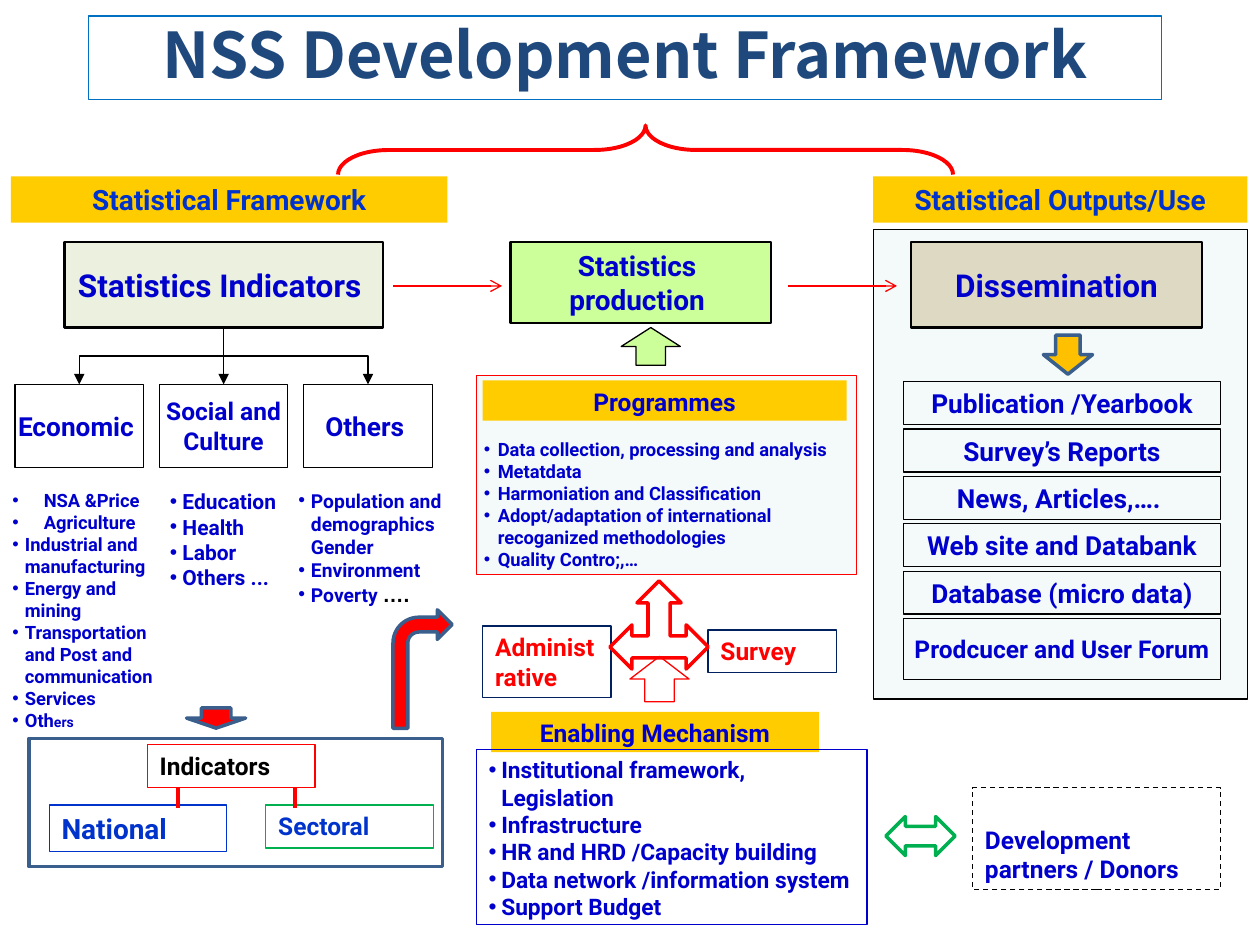
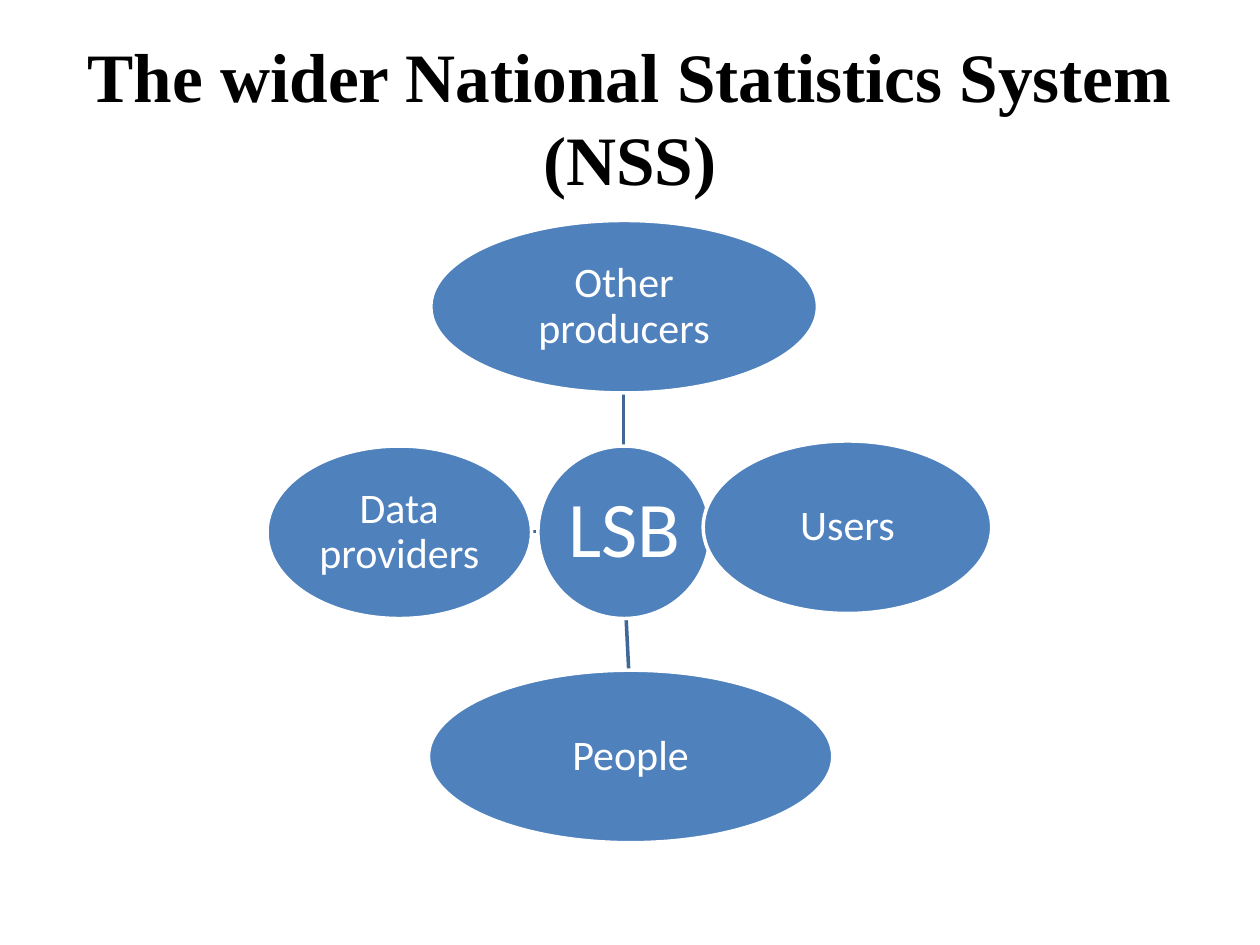
"""Build two slides on the national statistics system (NSS)."""
from lxml import etree
from pptx import Presentation
from pptx.dml.color import RGBColor
from pptx.enum.dml import MSO_LINE
from pptx.enum.shapes import MSO_CONNECTOR as CONN, MSO_SHAPE as SHAPE
from pptx.enum.text import MSO_ANCHOR as ANCHOR, PP_ALIGN as ALIGN
from pptx.oxml.ns import qn
from pptx.util import Pt

rgb = RGBColor.from_string
BLUE, ROYAL, RED, GREEN = "0000CC", "0033CC", "FF0000", "00B050"
BLACK, WHITE, STEEL, GOLD = "000000", "FFFFFF", "3A5F8C", "FFCC00"
LIME, NAVY, PALE = "CCFF99", "002060", "BBE0E3"
RECT = SHAPE.RECTANGLE
TIGHT, NORMAL = (1.44, 0), (7.2, 3.6)


def box(s, kind, x, y, w, h, text="", size=14, color=BLUE, fill=None, line=None, lw=0.75,
        align=ALIGN.LEFT, anchor=ANCHOR.TOP, inset=NORMAL, font="Roboto", bold=True,
        spacing=None, indent=None):
    """Add a shape, or a text box when kind is None."""
    at = Pt(x), Pt(y), Pt(w), Pt(h)
    if kind is None:
        sp = s.shapes.add_textbox(*at)
    else:
        sp = s.shapes.add_shape(kind, *at)
        sp.shadow.inherit = False
    if fill:
        sp.fill.solid()
        sp.fill.fore_color.rgb = rgb(fill)
    else:
        sp.fill.background()
    if line:
        sp.line.color.rgb = rgb(line)
        sp.line.width = Pt(lw)
    else:
        sp.line.fill.background()
    if not text:
        return sp
    tf = sp.text_frame
    tf.text = text
    tf.word_wrap = True
    tf.vertical_anchor = anchor
    tf.margin_left = tf.margin_right = Pt(inset[0])
    tf.margin_top = tf.margin_bottom = Pt(inset[1])
    for p in tf.paragraphs:
        p.alignment = align
        p.line_spacing = spacing
        for r in p.runs:
            r.font.size, r.font.name, r.font.bold = Pt(size), font, bold
            r.font.color.rgb = rgb(color)
        if indent:
            pPr = p._p.get_or_add_pPr()
            pPr.set("marL", str(Pt(indent[0])))
            pPr.set("indent", str(Pt(-indent[1])))
            etree.SubElement(pPr, qn("a:buFont")).set("typeface", "Arial")
            etree.SubElement(pPr, qn("a:buChar")).set("char", "•")
    return sp


def link(s, x1, y1, x2, y2, color, width=0.75, head=None, kind=CONN.STRAIGHT):
    """Add a connector, with an arrowhead at its end when head is given."""
    c = s.shapes.add_connector(kind, Pt(x1), Pt(y1), Pt(x2), Pt(y2))
    c.line.color.rgb = rgb(color)
    c.line.width = Pt(width)
    if head:
        etree.SubElement(c.line._get_or_add_ln(), qn("a:tailEnd")).set("type", head)
    etree.SubElement(c._element.spPr, qn("a:effectLst"))
    return c


prs = Presentation()
prs.slide_width, prs.slide_height = Pt(720), Pt(540)
blank = prs.slide_layouts[6]
centred = dict(align=ALIGN.CENTER, anchor=ANCHOR.MIDDLE)
cell = dict(centred, inset=TIGHT)

s = prs.slides.add_slide(blank)
box(s, RECT, 50.4, 9.2, 613.4, 47.6, "NSS Development Framework", 36, "1F497D",
    line="0070C0", font="Noto Sans CJK TC", spacing=0.9, **centred)
brace = box(s, SHAPE.LEFT_BRACE, 354.8, -90, 28.1, 351.4, line=RED, lw=2.25)
brace.rotation = 90
brace.adjustments[0] = 1.03

for x, y, w, h, edge in [(272.2, 214.6, 217.4, 113.8, RED), (499, 131, 213.8, 268.4, BLACK)]:
    panel = box(s, RECT, x, y, w, h, fill=PALE, line=edge)
    tint = panel._element.spPr.find(qn("a:solidFill"))[0]
    etree.SubElement(tint, qn("a:alpha")).set("val", "15000")

for text, x, y, w, h, size, color in [
        ("Statistical Framework", 6.3, 100.8, 249.4, 26.5, 16, ROYAL),
        ("Statistical Outputs/Use", 499, 100.8, 213.8, 26.5, 16, ROYAL),
        ("Programmes", 275.8, 217.4, 208, 23, 14, BLUE),
        ("Enabling Mechanism", 280.6, 406.8, 187.4, 23, 14, BLUE)]:
    box(s, RECT, x, y, w, h, text, size, color, GOLD, align=ALIGN.CENTER)

stages = [box(s, RECT, x, 138.2, w, h, text, size, fill=fill, line=BLACK, lw=1.5, **cell)
          for text, x, w, h, size, fill in [
              ("Statistics Indicators ", 36.7, 182.2, 49, 18, "EBF1DE"),
              ("Statistics \nproduction ", 291.6, 149, 46.4, 16, LIME),
              ("Dissemination", 520.6, 166.3, 49, 18, "DDD9C3")]]
for x in (224.6, 450.3):
    link(s, x, 163.4, x + 62.3, 163.4, RED, head="arrow")

step = 82.5
categories = [box(s, RECT, 8.6 + step * i, 219.6, 73.4, 47.5, text, size, line=BLACK, **cell)
              for i, (text, size) in enumerate(
                  [("Economic ", 15), ("Social and Culture", 14), ("Others ", 15)])]
stem = link(s, 127.8, 187.2, 127.8, 219.6, BLACK, head="triangle")
stem.begin_connect(stages[0], 2)
stem.end_connect(categories[1], 0)
for x, turn, flip in [(86.55, 90, "0"), (169.05, 270, "1")]:
    branch = link(s, x - 16.2, 203.4 - step / 2, x + 16.2, 203.4 + step / 2, BLACK,
                  head="triangle", kind=CONN.ELBOW)
    xfrm = branch._element.spPr.find(qn("a:xfrm"))
    xfrm.set("rot", str(turn * 60000))
    xfrm.set("flipH", flip)

topics = [box(s, None, x, 275.8, w, h, text, size, indent=(7.2, 7.2))
          for x, w, h, size, text in [
              (0, 97.9, 157, 10.5,
               "NSA &Price\nAgriculture\nIndustrial and manufacturing\nEnergy and mining\n"
               "Transportation and Post and communication\nServices\nOth"),
              (90, 96.5, 65.5, 12, "Education\nHealth\nLabor\nOthers ..."),
              (163.4, 106.6, 74.9, 11,
               "Population and demographics Gender\nEnvironment\nPoverty ")]]
for p in topics[0].text_frame.paragraphs[:2]:
    p._p.pPr.set("marL", str(Pt(18)))
    p._p.pPr.set("indent", str(Pt(-18)))
for topic, text, size, font, color in [(topics[0], "ers", 8, "Roboto", BLUE),
                                       (topics[2], "….", 12, "Arial", BLACK)]:
    r = topic.text_frame.paragraphs[-1].add_run()
    r.text = text
    r.font.size, r.font.name, r.font.bold = Pt(size), font, True
    r.font.color.rgb = rgb(color)

box(s, None, 268.6, 247, 214.6, 82,
    "Data collection, processing and analysis\nMetatdata\nHarmoniation and Classification\n"
    "Adopt/adaptation of international recoganized methodologies\nQuality Contro;,…",
    10.5, anchor=ANCHOR.MIDDLE, inset=TIGHT, indent=(14.4, 7.92))
box(s, RECT, 272.2, 428.4, 223.2, 100.1,
    "Institutional framework, Legislation\nInfrastructure\nHR and HRD /Capacity building\n"
    "Data network /information system\nSupport Budget", 13, line=BLUE, indent=(7.2, 7.2))
donors = box(s, RECT, 555.8, 450, 141.8, 58.3, "Development partners / Donors", line=BLACK,
             anchor=ANCHOR.BOTTOM)
donors.line.dash_style = MSO_LINE.DASH

outputs = ["Publication /Yearbook", "Survey’s Reports", "News, Articles,…. ",
           "Web site and Databank", "Database (micro data)", "Prodcucer and User Forum"]
for i, text in enumerate(outputs):
    h, size = (34.6, 14) if i == len(outputs) - 1 else (24.5, 15)
    box(s, RECT, 516.2, 218.2 + 27.06 * i, 181.4, h, text, size, line=BLACK, **cell)

box(s, RECT, 16.6, 421.9, 236.2, 73.4, line=STEEL, lw=2)
for text, x, y, w, h, size, color, edge in [
        ("Indicators", 84.2, 425.5, 95.8, 24.5, 14, BLACK, RED),
        ("National", 28.1, 460.1, 101.5, 26.6, 16, ROYAL, ROYAL),
        ("Sectoral", 151.9, 460.1, 95.8, 24.5, 14, ROYAL, GREEN),
        ("Administrative", 275.8, 357.8, 73.4, 41, 14, RED, NAVY),
        ("Survey", 404.6, 360, 73.4, 24.5, 14, RED, NAVY)]:
    box(s, RECT, x, y, w, h, text, size, color, line=edge)
for x in (101.5, 168.5):
    link(s, x, 450, x, 461.5, RED, 2.25)

for kind, x, y, w, h, fill, edge, lw in [
        (SHAPE.UP_ARROW, 360, 375.1, 33.8, 25.9, None, RED, 0.75),
        (SHAPE.UP_ARROW, 355, 187.2, 33.8, 21.6, LIME, BLACK, 0.75),
        (SHAPE.DOWN_ARROW, 106.6, 404.6, 33.8, 11.5, RED, STEEL, 2),
        (SHAPE.LEFT_RIGHT_ARROW, 506.2, 466.6, 39.6, 22.3, None, GREEN, 2),
        (SHAPE.BENT_ARROW, 224.6, 348.5, 33.8, 67.7, RED, STEEL, 2),
        (SHAPE.DOWN_ARROW, 596.2, 191.5, 28.1, 22.3, "FFC000", STEEL, 2),
        (SHAPE.LEFT_RIGHT_UP_ARROW, 348.5, 331.9, 56.2, 50.4, None, RED, 2)]:
    box(s, kind, x, y, w, h, fill=fill, line=edge, lw=lw)

s = prs.slides.add_slide(blank)
box(s, None, 36, 21.6, 648, 90, "The wider National Statistics System (NSS)", 39.6, BLACK,
    font="Times New Roman", **centred)
for x1, y1, x2, y2 in [(356.4, 254.9, 356.4, 225.4), (406.1, 303.1, 401.8, 303.1),
                       (357.8, 353.5, 359.3, 383.8), (307.4, 303.8, 303.1, 303.8)]:
    link(s, x1, y1, x2, y2, "3F6797", 2)
for text, x, y, w, size in [("LSB", 307.4, 254.9, 98.6, 45),
                            ("Other producers", 246.2, 126, 221, 24),
                            ("Users", 401.8, 252, 164.9, 24),
                            ("People", 244.8, 383, 231.1, 24),
                            ("Data providers", 152.6, 254.9, 151.2, 24)]:
    box(s, SHAPE.OVAL, x, y, w, 98.6, text, size, WHITE, "4F81BD", WHITE, 2,
        inset=(1.44, 1.44), font="Calibri", bold=False, spacing=0.9, **centred)

prs.save("out.pptx")
